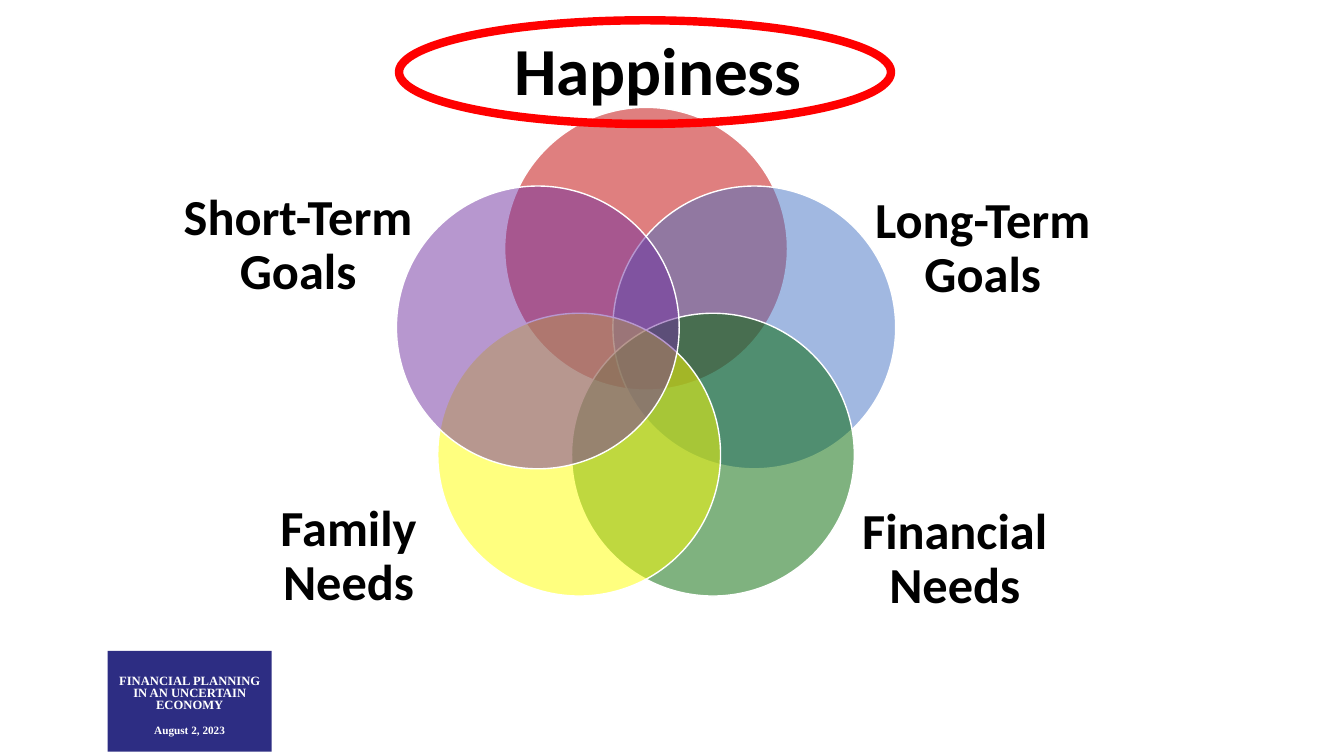
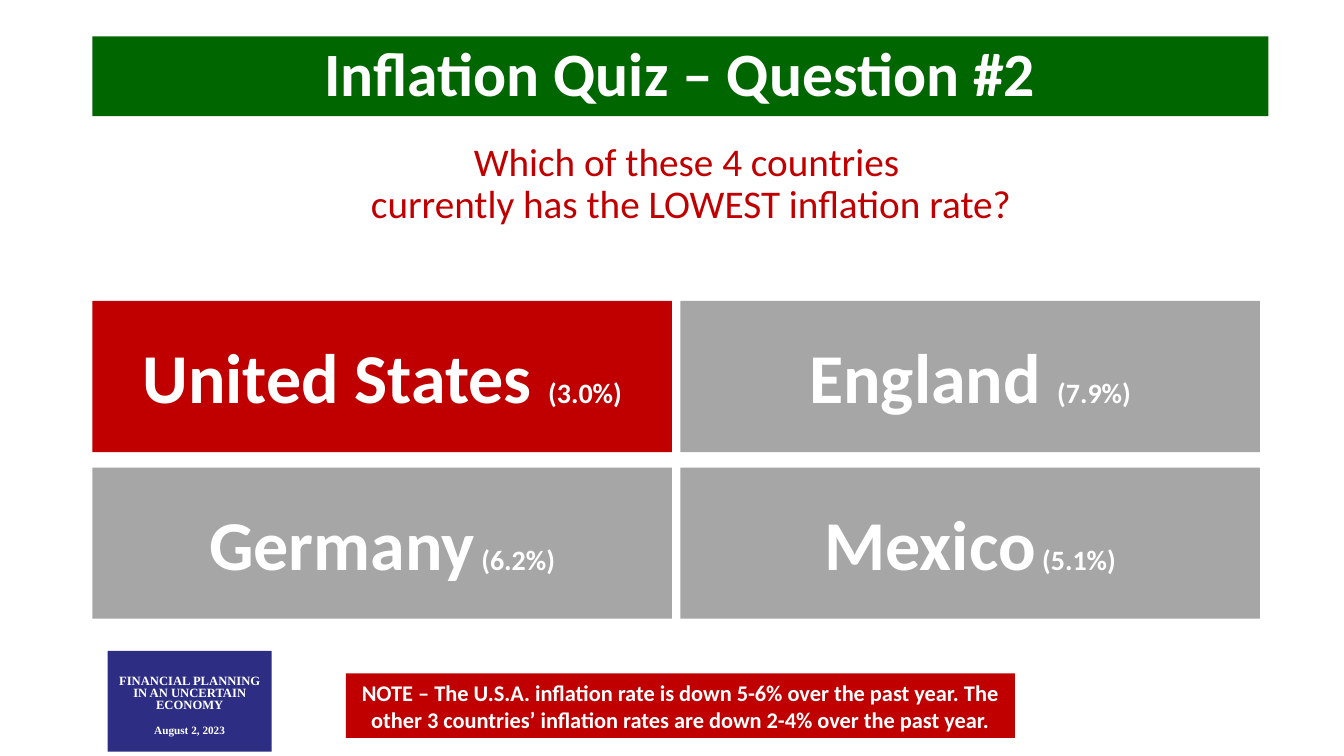
from dataclasses import dataclass
from itertools import product
from math import cos, radians, sin

from lxml import etree
from pptx import Presentation
from pptx import util as u
from pptx.dml.color import RGBColor
from pptx.enum import shapes, text
from pptx.oxml.ns import qn


@dataclass(frozen=True)
class Theme:
    white: str = "FFFFFF"
    black: str = "000000"
    red: str = "C00000"
    bright_red: str = "FF0000"
    green: str = "006600"
    blue: str = "4472C4"
    yellow: str = "FFFF00"
    purple: str = "7030A0"
    grey: str = "A6A6A6"
    navy: str = "2D2D83"
    sans: str = "Calibri"
    serif: str = "Times New Roman"
    country: int = 50
    headline: int = 48
    banner: int = 44
    label: int = 36
    question: int = 28
    rate: int = 20
    note: int = 16
    badge: int = 9
    date: int = 8


THEME = Theme()


def write(para, content, *, size, color=THEME.white, bold=True,
          font=THEME.sans, spacing=0.9, before=0):
    """Append text to a centred paragraph; newlines become line breaks."""
    para.alignment = text.PP_ALIGN.CENTER
    para.line_spacing = spacing
    para.space_before = u.Pt(before)
    for index, line in enumerate(content.split("\n")):
        if index:
            para.add_line_break()
        span = para.add_run()
        span.text = line
        span.font.name = font
        span.font.size = u.Pt(size)
        span.font.bold = bold
        span.font.color.rgb = RGBColor.from_string(color)


class Slides:
    """Holds the deck, its theme and the current page."""

    def __init__(self, theme):
        self.theme = theme
        self.deck = Presentation()
        self.deck.slide_width = u.Pt(960)
        self.deck.slide_height = u.Pt(540)
        self.layout = self.deck.slide_layouts[5]
        self.page = None

    def new_page(self):
        self.page = self.deck.slides.add_slide(self.layout)

    def frame(self, box, anchor=text.MSO_ANCHOR.MIDDLE, insets=(7.2, 3.6, 7.2, 3.6)):
        frame = box.text_frame
        frame.word_wrap = True
        frame.auto_size = text.MSO_AUTO_SIZE.NONE
        frame.vertical_anchor = anchor
        left, top, right, bottom = map(u.Pt, insets)
        frame.margin_left, frame.margin_top = left, top
        frame.margin_right, frame.margin_bottom = right, bottom
        return frame

    def title(self, content, left, top, width, height, *, size, color, fill=None):
        box = self.page.shapes.title
        box.left, box.top = u.Pt(left), u.Pt(top)
        box.width, box.height = u.Pt(width), u.Pt(height)
        if fill:
            box.fill.solid()
            box.fill.fore_color.rgb = RGBColor.from_string(fill)
        frame = self.frame(box, insets=(0, 0, 0, 0))
        write(frame.paragraphs[0], content, size=size, color=color)

    def shape(self, kind, left, top, width, height, *, fill=None, alpha=None,
              line=None, line_width=1):
        box = self.page.shapes.add_shape(
            kind, u.Pt(left), u.Pt(top), u.Pt(width), u.Pt(height))
        box.shadow.inherit = False
        if fill:
            box.fill.solid()
            box.fill.fore_color.rgb = RGBColor.from_string(fill)
        else:
            box.fill.background()
        if alpha is not None:
            color = box.element.spPr.find(qn("a:solidFill"))[0]
            etree.SubElement(color, qn("a:alpha"), val=str(alpha * 1000))
        if line:
            box.line.color.rgb = RGBColor.from_string(line)
            box.line.width = u.Pt(line_width)
        else:
            box.line.fill.background()
        return box

    def rect(self, left, top, width, height, fill):
        return self.shape(shapes.MSO_SHAPE.RECTANGLE, left, top, width, height, fill=fill)

    def ellipse(self, left, top, width, height, **style):
        return self.shape(shapes.MSO_SHAPE.OVAL, left, top, width, height, **style)

    def label(self, content, left, top, width, height, **style):
        box = self.page.shapes.add_textbox(
            u.Pt(left), u.Pt(top), u.Pt(width), u.Pt(height))
        frame = self.frame(box, text.MSO_ANCHOR.TOP)
        write(frame.paragraphs[0], content, **style)
        return frame

    def add_layout_badge(self):
        """Draw the event badge once, then move it to the shared layout."""
        theme = self.theme
        badge = self.rect(77, 465, 117, 72, theme.navy)
        frame = self.frame(badge, insets=(7.2, 10.3, 7.2, 3.6))
        style = dict(font=theme.serif, spacing=0.8)
        write(frame.paragraphs[0], "FINANCIAL PLANNING IN AN UNCERTAIN ECONOMY",
              size=theme.badge, **style)
        write(frame.add_paragraph(), "August 2, 2023",
              size=theme.date, before=10, **style)
        self.layout.shapes.element.append(badge.element)


def happiness_page(slides):
    theme = slides.theme
    slides.new_page()
    slides.add_layout_badge()
    slides.title("Happiness", 353, 24, 234, 58, size=theme.headline, color=theme.black)

    # Five circles, evenly spaced around a ring, clockwise from the top
    center_x, center_y, ring, diameter = 461.5, 259, 81.3, 202
    colors = (theme.red, theme.blue, theme.green, theme.yellow, theme.purple)
    for index, color in enumerate(colors):
        angle = radians(360 / len(colors) * index)
        slides.ellipse(center_x + ring * sin(angle) - diameter / 2,
                       center_y - ring * cos(angle) - diameter / 2,
                       diameter, diameter, fill=color, alpha=50, line=theme.white)

    # Labels beside the circles
    for content, left, top, width in (
            ("Long-Term Goals", 597, 134, 210),
            ("Financial Needs", 607, 356, 150),
            ("Family Needs", 174, 354, 150),
            ("Short-Term Goals", 108, 132, 210)):
        frame = slides.label(content, left, top, width, 88,
                             size=theme.label, color=theme.black)
        frame.margin_left = frame.margin_right = 0
        frame.vertical_anchor = text.MSO_ANCHOR.MIDDLE

    # Highlight around the headline
    slides.ellipse(285, 14.5, 351.5, 74, line=theme.bright_red, line_width=6)


def quiz_page(slides):
    theme = slides.theme
    slides.new_page()
    slides.title("Inflation Quiz – Question #2", 66, 26, 840, 57,
                 size=theme.banner, color=theme.white, fill=theme.green)
    slides.label("Which of these 4 countries \ncurrently has the LOWEST inflation rate?",
                 66, 98, 855, 80, size=theme.question, color=theme.red, bold=False)

    # Answer cards in a two-by-two grid
    answers = (("United States ", "(3.0%)"), ("England ", "(7.9%)"),
               ("Germany", " (6.2%)"), ("Mexico", " (5.1%)"))
    width, height, gap_x, gap_y = 414, 108, 6, 11
    for (row, column), (country, rate) in zip(product(range(2), repeat=2), answers):
        fill = theme.grey if row or column else theme.red
        card = slides.rect(66 + column * (width + gap_x),
                           215 + row * (height + gap_y), width, height, fill)
        para = slides.frame(card, insets=(7.2, 10, 7.2, 3.6)).paragraphs[0]
        write(para, country, size=theme.country)
        write(para, rate, size=theme.rate)

    # Explanatory note
    note = slides.rect(247, 481, 478, 46, theme.red)
    write(slides.frame(note).paragraphs[0],
          "NOTE – The U.S.A. inflation rate is down 5-6% over the past year. "
          "The other 3 countries’ inflation rates are down 2-4% over the past year.",
          size=theme.note, spacing=1.0)


def main():
    slides = Slides(THEME)
    happiness_page(slides)
    quiz_page(slides)
    slides.deck.save("out.pptx")


if __name__ == "__main__":
    main()
